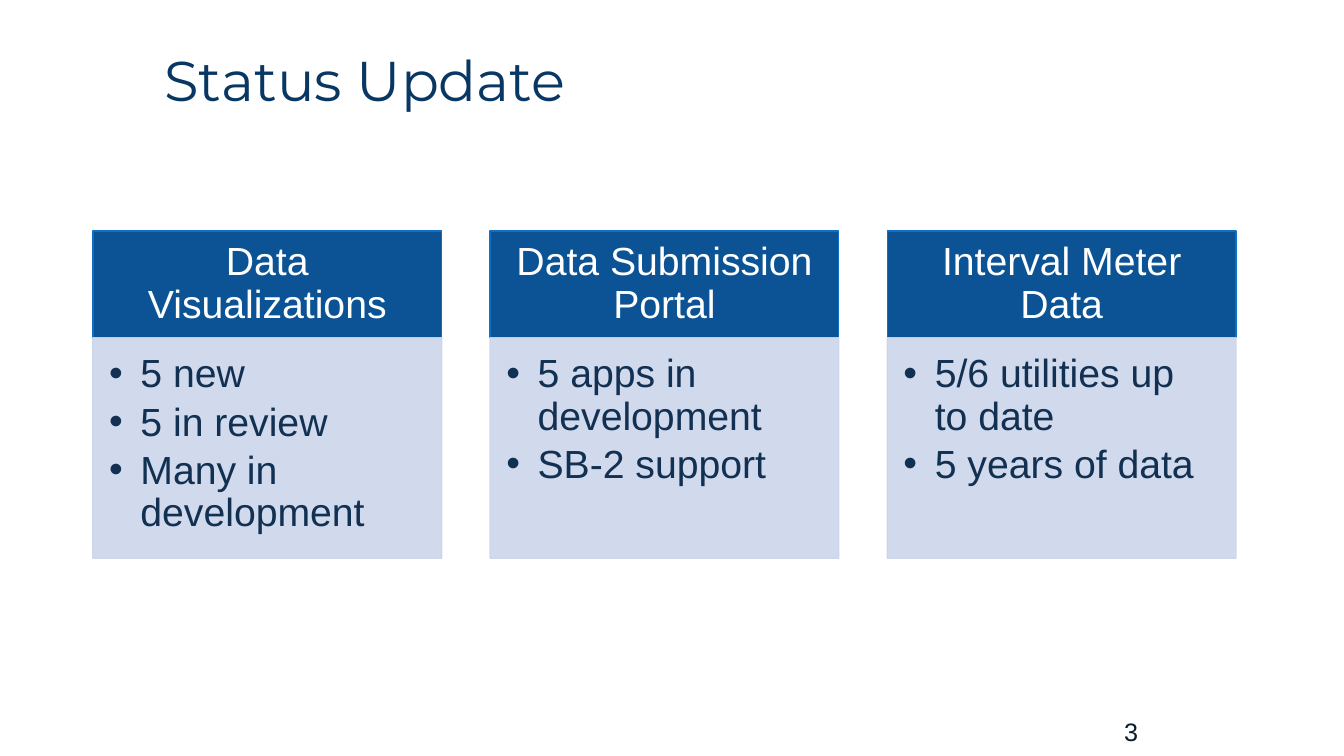
from lxml.etree import SubElement
from pptx import Presentation
from pptx.dml.color import RGBColor
from pptx.enum.shapes import MSO_SHAPE
from pptx.enum.text import MSO_ANCHOR, PP_ALIGN
from pptx.oxml.ns import qn
from pptx.util import Cm, Pt

TITLE = "Status Update"
PAGE_NUMBER = "3"
TOPICS = [
    ("Data Visualizations", ["5 new", "5 in review", "Many in development"]),
    ("Data Submission Portal", ["5 apps in development", "SB-2 support"]),
    ("Interval Meter Data", ["5/6 utilities up to date", "5 years of data"]),
]

TITLE_NAVY = RGBColor(0x08, 0x37, 0x63)
PAGE_INK = RGBColor(0x06, 0x1C, 0x28)
HEADER_BLUE = RGBColor(0x0B, 0x53, 0x94)
HEADER_EDGE = RGBColor(0x0F, 0x6F, 0xC6)
BODY_TINT = RGBColor(0xCC, 0xD5, 0xEA)
BODY_INK = RGBColor(0x11, 0x30, 0x52)
WHITE = RGBColor(0xFF, 0xFF, 0xFF)

COLUMN_LEFT, COLUMN_PITCH, COLUMN_WIDTH = 2.34, 10.01, 8.79
HEADER_TOP, HEADER_HEIGHT, BODY_HEIGHT = 5.82, 2.69, 5.56
BULLET_INDENT = Cm(0.79)


def write(shape, lines, size, color, font="Arial", align=PP_ALIGN.LEFT,
          anchor=MSO_ANCHOR.MIDDLE, insets=(0.25, 0.13, 0.25, 0.13), bullets=False):
    """Fill a shape with paragraphs; insets are left, top, right, bottom in cm."""
    frame = shape.text_frame
    frame.text = "\n".join(lines)
    frame.word_wrap = True
    frame.vertical_anchor = anchor
    (frame.margin_left, frame.margin_top,
     frame.margin_right, frame.margin_bottom) = map(Cm, insets)
    for paragraph in frame.paragraphs:
        paragraph.alignment = align
        paragraph.line_spacing = 0.9
        if bullets:
            paragraph.space_after = Pt(size * 0.15)
            properties = paragraph._p.get_or_add_pPr()
            properties.set("marL", str(BULLET_INDENT))
            properties.set("indent", str(-BULLET_INDENT))
            SubElement(properties, qn("a:buFont")).set("typeface", "Arial")
            SubElement(properties, qn("a:buChar")).set("char", "•")
        for run in paragraph.runs:
            run.font.name = font
            run.font.size = Pt(size)
            run.font.color.rgb = color


def add_panel(slide, left, top, height, fill, edge, opacity=100):
    panel = slide.shapes.add_shape(
        MSO_SHAPE.RECTANGLE, Cm(left), Cm(top), Cm(COLUMN_WIDTH), Cm(height))
    panel.shadow.inherit = False
    panel.fill.solid()
    panel.fill.fore_color.rgb = fill
    panel.line.color.rgb = edge
    panel.line.width = Pt(1)
    if opacity < 100:
        for color in panel._element.spPr.iter(qn("a:srgbClr")):
            SubElement(color, qn("a:alpha")).set("val", str(opacity * 1000))
    return panel


def main():
    deck = Presentation()
    deck.slide_width, deck.slide_height = Cm(33.87), Cm(19.05)
    slide = deck.slides.add_slide(deck.slide_layouts[6])

    title = slide.shapes.add_textbox(Cm(3.89), Cm(0.66), Cm(27.66), Cm(2.9))
    write(title, [TITLE], 40, TITLE_NAVY, font="Montserrat")

    page = slide.shapes.add_textbox(Cm(23.93), Cm(17.96), Cm(5), Cm(1.02))
    write(page, [PAGE_NUMBER], 18, PAGE_INK, align=PP_ALIGN.RIGHT)

    for column, (heading, points) in enumerate(TOPICS):
        left = COLUMN_LEFT + column * COLUMN_PITCH
        header = add_panel(slide, left, HEADER_TOP, HEADER_HEIGHT, HEADER_BLUE, HEADER_EDGE)
        write(header, [heading], 28, WHITE, align=PP_ALIGN.CENTER,
              insets=(0.56, 0.3, 0.56, 0.3))
        body = add_panel(slide, left, HEADER_TOP + HEADER_HEIGHT, BODY_HEIGHT,
                         BODY_TINT, BODY_TINT, opacity=90)
        write(body, points, 28, BODY_INK, anchor=MSO_ANCHOR.TOP,
              insets=(0.41, 0.41, 0.56, 0.61), bullets=True)

    deck.save("out.pptx")


if __name__ == "__main__":
    main()
